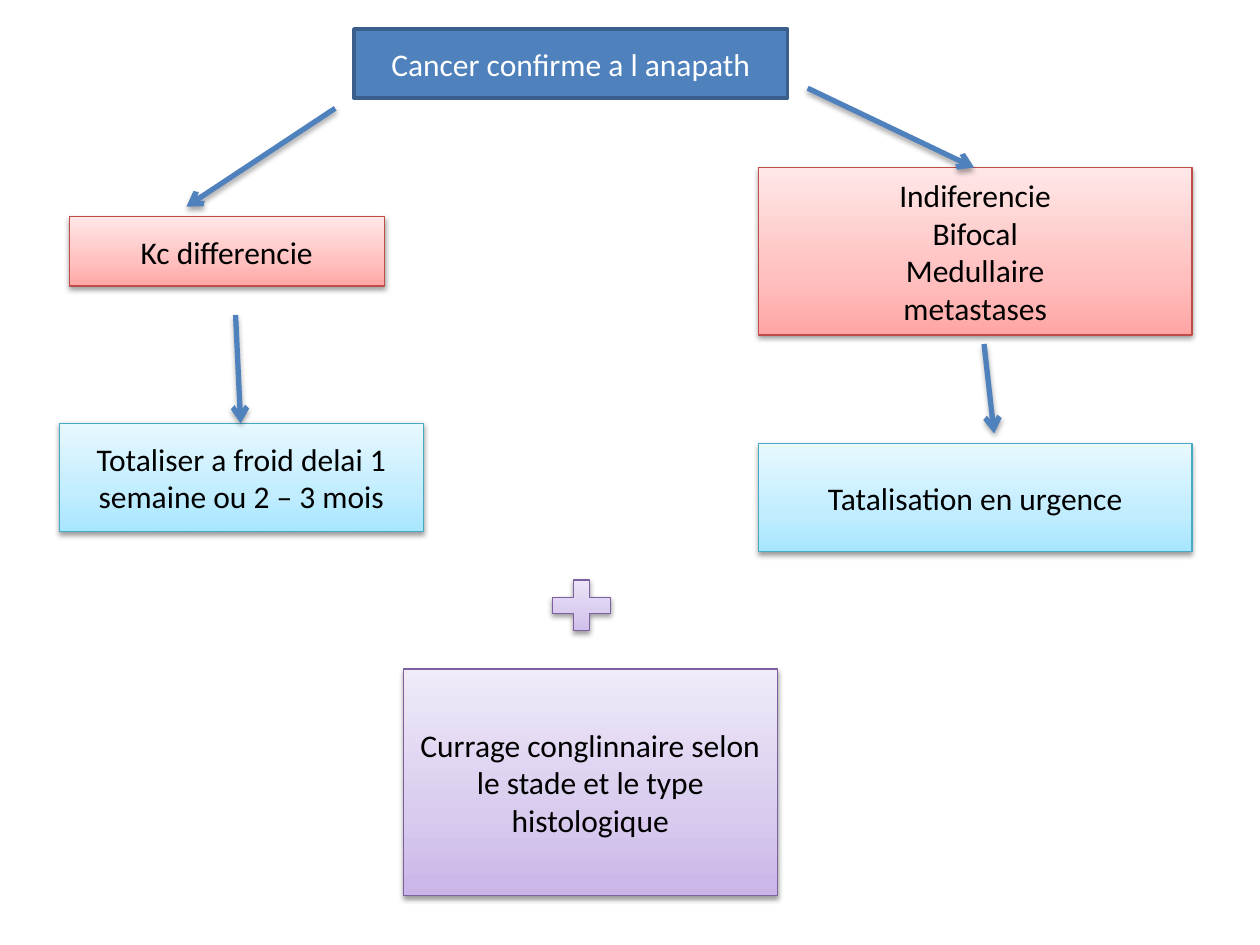
from lxml.etree import SubElement
from copy import deepcopy
from pptx import Presentation
from pptx.dml.color import RGBColor
from pptx.enum.shapes import MSO_CONNECTOR as CONNECTOR, MSO_SHAPE as SHAPE
from pptx.enum.text import MSO_ANCHOR as ANCHOR, PP_ALIGN as ALIGN
from pptx.oxml.ns import qn
from pptx.util import Inches, Pt

WHITE = RGBColor(0xFF, 0xFF, 0xFF)
BLACK = RGBColor(0, 0, 0)
BLUE = RGBColor(0x4F, 0x81, 0xBD)
NAVY = RGBColor(0x3A, 0x5F, 0x8C)
RED_LINE = RGBColor(0xBF, 0x4C, 0x48)
CYAN_LINE = RGBColor(0x46, 0xAA, 0xC5)
PURPLE_LINE = RGBColor(0x7D, 0x60, 0xA0)
REDS = (RGBColor(0xFF, 0xA6, 0xA5), RGBColor(0xFF, 0xC0, 0xBF), RGBColor(0xFF, 0xE7, 0xE7))
CYANS = (RGBColor(0xA7, 0xE6, 0xFF), RGBColor(0xC1, 0xED, 0xFF), RGBColor(0xE7, 0xF8, 0xFF))
PURPLES = (RGBColor(0xC9, 0xB5, 0xE8), RGBColor(0xD8, 0xCB, 0xEE), RGBColor(0xF0, 0xEA, 0xF9))
STOPS = (0, 0.35, 1)


def add_shadow(effects, distance, opacity):
    shadow = SubElement(effects, qn("a:outerShdw"), blurRad=str(Pt(3.1)),
                        dist=str(Pt(distance)), dir="5400000", rotWithShape="0")
    color = SubElement(shadow, qn("a:srgbClr"), val="000000")
    SubElement(color, qn("a:alpha"), val=str(opacity * 1000))


def fill_gradient(sp, colors):
    sp.fill.gradient()
    sp.fill.gradient_angle = 90
    stop_list = sp._element.spPr.find(".//" + qn("a:gsLst"))
    stop_list.append(deepcopy(stop_list[-1]))
    for stop, position, color in zip(sp.fill.gradient_stops, STOPS, colors):
        stop.position = position
        stop.color.rgb = color


def add_node(slide, box, lines, colors, line_color, shape=SHAPE.RECTANGLE):
    sp = slide.shapes.add_shape(shape, *map(Inches, box))
    sp.line.color.rgb = line_color
    sp.shadow.inherit = False
    if isinstance(colors, RGBColor):
        sp.fill.solid()
        sp.fill.fore_color.rgb = colors
        sp.line.width = Pt(2)
        text_color = WHITE
    else:
        fill_gradient(sp, colors)
        sp.line.width = Pt(0.75)
        add_shadow(sp._element.spPr.find(qn("a:effectLst")), 1.6, 38)
        text_color = BLACK
    tf = sp.text_frame
    tf.word_wrap = True
    tf.vertical_anchor = ANCHOR.MIDDLE
    tf.text = "\n".join(lines)
    for p in tf.paragraphs:
        p.alignment = ALIGN.CENTER
        p.font.name = "Calibri"
        p.font.size = Pt(18)
        p.font.color.rgb = text_color


def add_arrow(slide, start, end):
    arrow = slide.shapes.add_connector(CONNECTOR.STRAIGHT, *map(Inches, start + end))
    arrow.line.color.rgb = BLUE
    arrow.line.width = Pt(3)
    SubElement(arrow.line._get_or_add_ln(), qn("a:tailEnd"), type="arrow")
    add_shadow(SubElement(arrow._element.spPr, qn("a:effectLst")), 1.8, 35)


def add_urgent_branch(slide, left, top, width):
    add_node(slide, (left, top, width, 1.33),
             ["Indiferencie", "Bifocal", "Medullaire", "metastases"], REDS, RED_LINE)
    add_node(slide, (left, top + 2.19, width, 0.86),
             ["Tatalisation en urgence"], CYANS, CYAN_LINE)
    add_arrow(slide, (left + 0.39, top - 0.63), (left + 1.71, top))
    add_arrow(slide, (left + 1.79, top + 1.4), (left + 1.87, top + 2.11))


def add_delayed_branch(slide, left, top, width):
    add_node(slide, (left + 0.08, top, 2.5, 0.55), ["Kc differencie"], REDS, RED_LINE)
    add_node(slide, (left, top + 1.64, width, 0.86),
             ["Totaliser a froid delai 1 semaine ou 2 – 3 mois"], CYANS, CYAN_LINE)
    add_arrow(slide, (left + 2.19, top - 0.86), (left + 1.01, top - 0.08))
    add_arrow(slide, (left + 1.4, top + 0.78), (left + 1.44, top + 1.64))


def add_dissection(slide, left, top, width):
    add_node(slide, (left, top + 0.78, width, 1.8),
             ["Currage conglinnaire selon le stade et le type histologique"],
             PURPLES, PURPLE_LINE)
    add_node(slide, (left + 1.1, top, 0.63, 0.55), [], PURPLES, PURPLE_LINE, SHAPE.MATH_PLUS)


def main():
    prs = Presentation()
    prs.slide_width, prs.slide_height = Inches(10), Inches(7.5)
    slide = prs.slides.add_slide(prs.slide_layouts[6])
    add_node(slide, (2.81, 0.23, 3.44, 0.55), ["Cancer confirme a l anapath"], BLUE, NAVY)
    add_urgent_branch(slide, 6.02, 1.33, 3.44)
    add_delayed_branch(slide, 0.47, 1.72, 2.89)
    add_dissection(slide, 3.2, 4.53, 2.97)
    prs.save("out.pptx")


if __name__ == "__main__":
    main()
